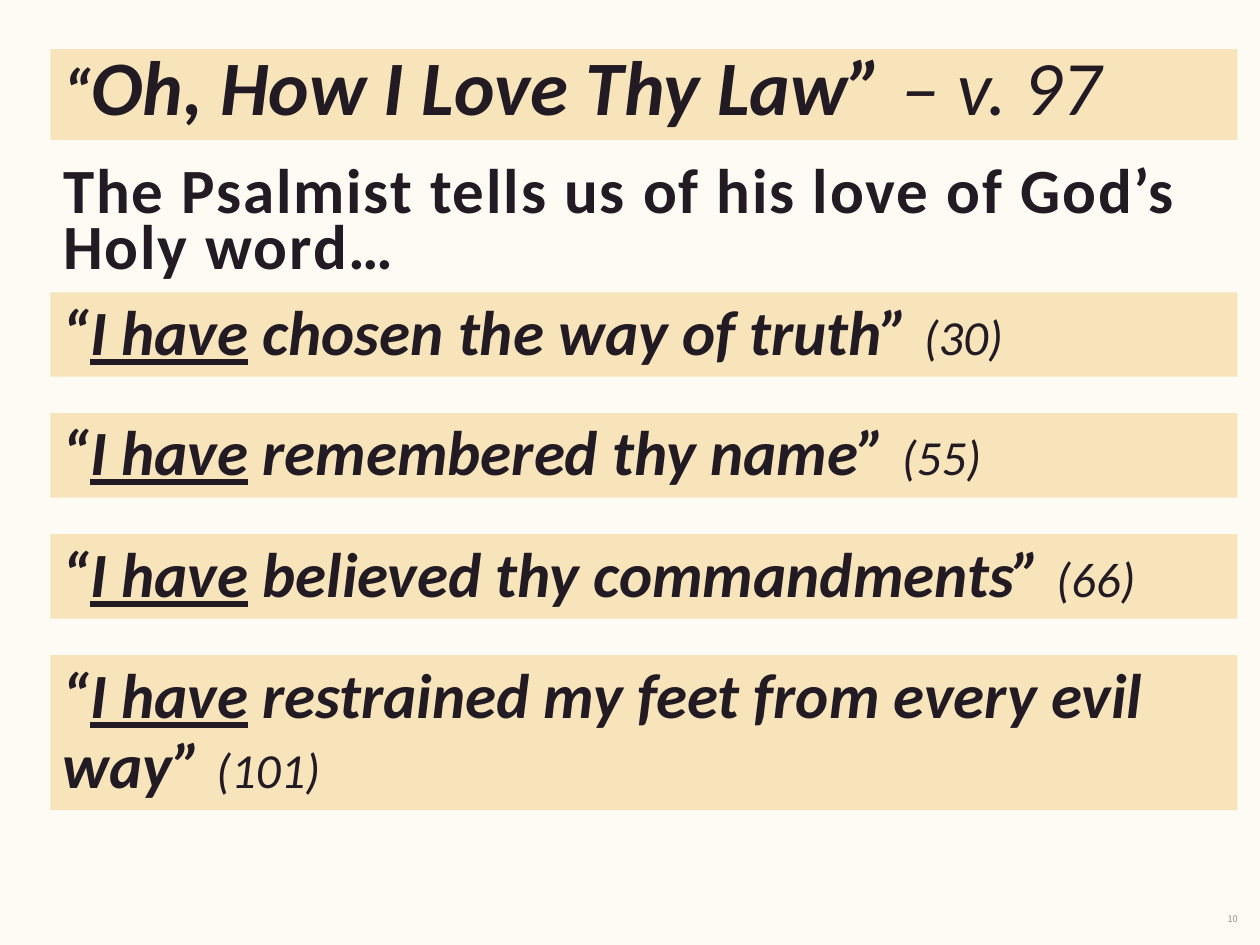
from dataclasses import dataclass

from pptx import Presentation
from pptx import util as u
from pptx.dml.color import RGBColor
from pptx.enum import shapes, text
from pptx.oxml.ns import qn


@dataclass(frozen=True)
class Theme:
    font: str = "Calibri"
    number_font: str = "Noto Sans CJK JP"
    paper: str = "FEFBF5"
    band: str = "F7E4BA"
    ink: str = "231B23"
    muted: str = "8D8D8D"
    title_size: float = 44
    title_quote_size: float = 37
    text_size: float = 36
    verse_size: float = 28
    wide_space_size: float = 40
    number_size: float = 5.2


THEME = Theme()

# Text after "I have", the space before the verse and its size, verse, card height
QUOTES = [
    (" chosen the way of truth”", THEME.text_size, "(30)", 0.67),
    (" remembered thy name”", THEME.wide_space_size, "(55)", 0.67),
    (" believed thy commandments”", THEME.text_size, "(66)", 0.67),
    (" restrained my feet from every evil way”", THEME.text_size, "(101)", 1.23),
]


def place(shape, box):
    shape.left, shape.top, shape.width, shape.height = (u.Inches(n) for n in box)


def fill_band(shape):
    shape.fill.solid()
    shape.fill.fore_color.rgb = RGBColor.from_string(THEME.band)


def prepare_text(shape, line_height=None, anchor=text.MSO_ANCHOR.TOP,
                 align=text.PP_ALIGN.LEFT):
    frame = shape.text_frame
    frame.word_wrap = True
    frame.auto_size = text.MSO_AUTO_SIZE.NONE
    frame.vertical_anchor = anchor
    para = frame.paragraphs[0]
    para.alignment = align
    para.space_before = u.Pt(0)
    if line_height:
        para.line_spacing = u.Pt(line_height)
    return para


def add_span(para, words, size, bold=True, italic=True, underline=False,
             font=THEME.font, color=THEME.ink):
    span = para.add_run()
    span.text = words
    span.font.name = font
    span.font.size = u.Pt(size)
    span.font.bold = bold
    span.font.italic = italic
    span.font.underline = underline
    span.font.color.rgb = RGBColor.from_string(color)
    return span


def fill_title(shape, box):
    place(shape, box)
    fill_band(shape)
    para = prepare_text(shape, 43)
    add_span(para, "“", THEME.title_quote_size)
    add_span(para, "Oh, How I Love Thy Law” ", THEME.title_size)
    add_span(para, "– v. 97", THEME.title_size, bold=False)


def fill_intro(shape, box):
    place(shape, box)
    para = prepare_text(shape, 32)
    span = add_span(para, "The Psalmist tells us of his love of God’s Holy word…",
                    THEME.text_size, italic=False)
    # Wider letter spacing, no bullet and no indent
    span.font._element.set("spc", "110")
    settings = para._p.get_or_add_pPr()
    settings.set("marL", "0")
    settings.set("indent", "0")
    settings.append(settings.makeelement(qn("a:buNone"), {}))


def add_quote(page, box, words, space_size, verse):
    card = page.shapes.add_shape(shapes.MSO_SHAPE.RECTANGLE, 0, 0, 0, 0)
    place(card, box)
    card.shadow.inherit = False
    fill_band(card)
    card.line.fill.background()
    para = prepare_text(card, 40)
    add_span(para, "“", THEME.text_size)
    add_span(para, "I have", THEME.text_size, underline=True)
    add_span(para, words, THEME.text_size)
    add_span(para, " ", space_size)
    add_span(para, verse, THEME.verse_size, bold=False)


def add_quotes(page, box, pitch):
    left, top, width = box
    for index, (words, space_size, verse, height) in enumerate(QUOTES):
        add_quote(page, (left, top + index * pitch, width, height),
                  words, space_size, verse)


def add_page_number(page, box):
    number = page.shapes.add_textbox(0, 0, 0, 0)
    place(number, box)
    para = prepare_text(number, anchor=text.MSO_ANCHOR.MIDDLE,
                        align=text.PP_ALIGN.RIGHT)
    add_span(para, "10", THEME.number_size, bold=False, italic=False,
             font=THEME.number_font, color=THEME.muted)


def build_page(deck):
    page = deck.slides.add_slide(deck.slide_layouts[1])
    page.background.fill.solid()
    page.background.fill.fore_color.rgb = RGBColor.from_string(THEME.paper)
    fill_title(page.shapes.title, (0.4, 0.39, 9.42, 0.72))
    fill_intro(page.placeholders[1], (0.4, 1.3, 9.6, 1))
    add_quotes(page, (0.4, 2.32, 9.42), pitch=0.96)
    add_page_number(page, (7.67, 7.17, 2.25, 0.25))


def main():
    deck = Presentation()
    deck.slide_width = u.Inches(10)
    deck.slide_height = u.Inches(7.5)
    build_page(deck)
    deck.save("out.pptx")


if __name__ == "__main__":
    main()
